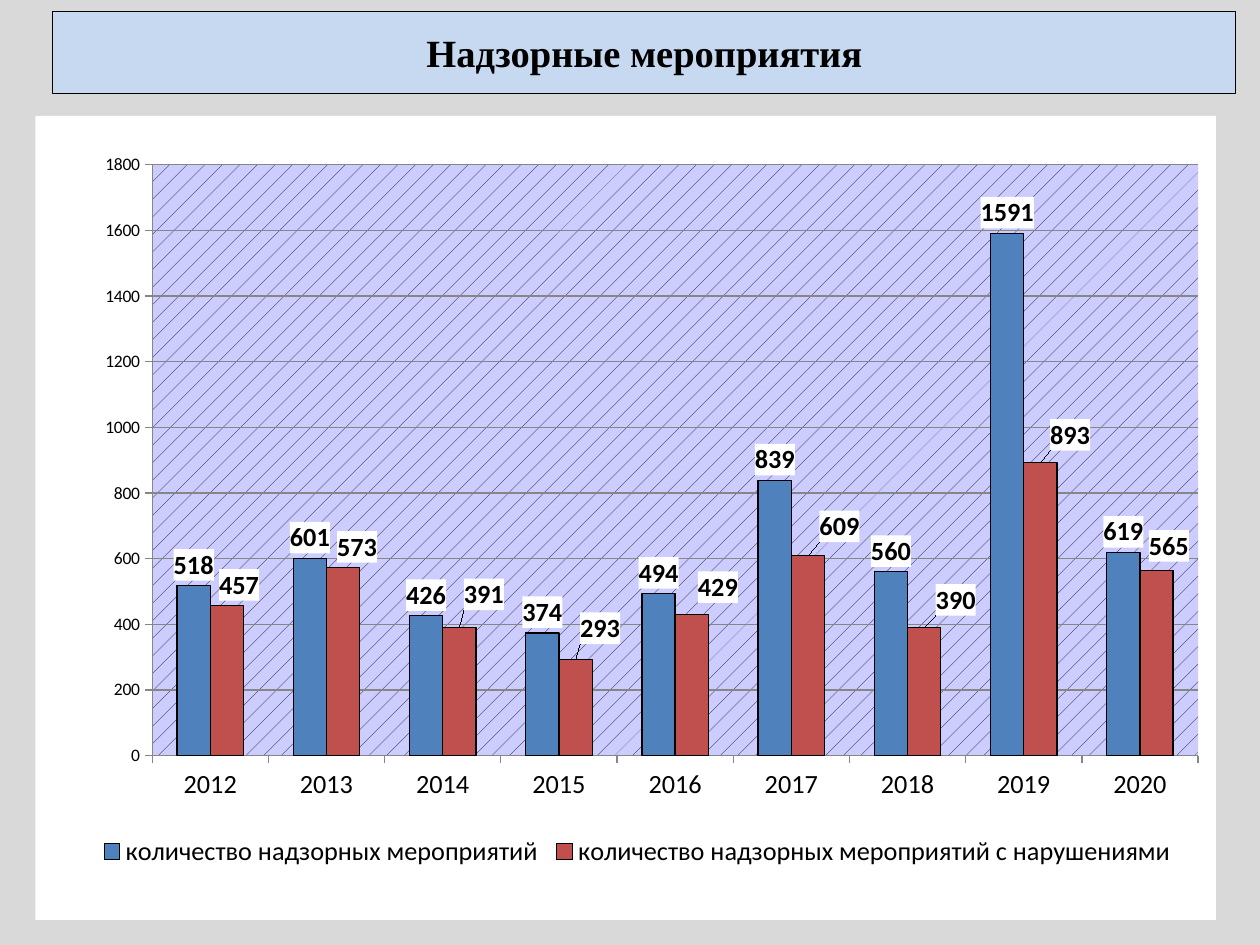
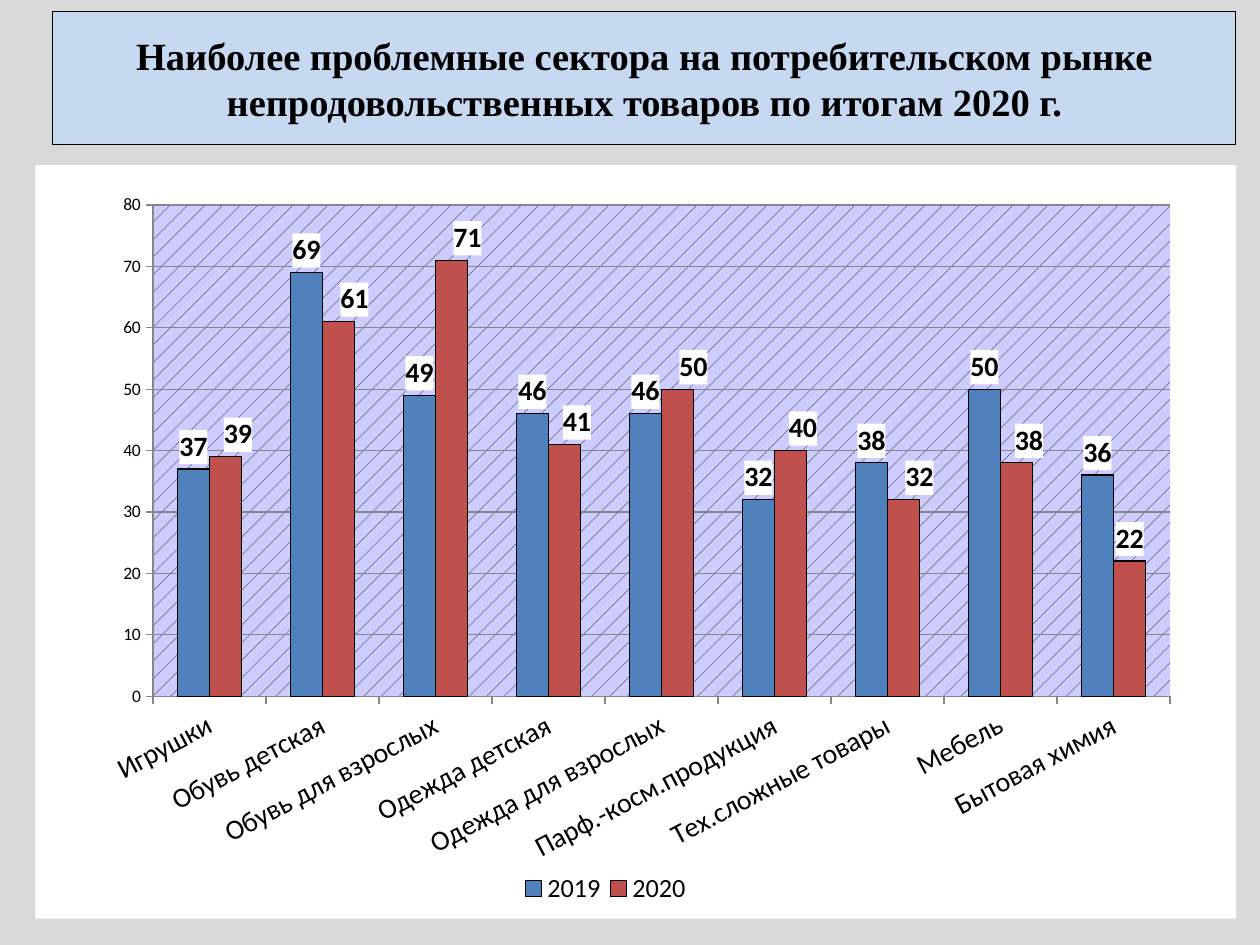
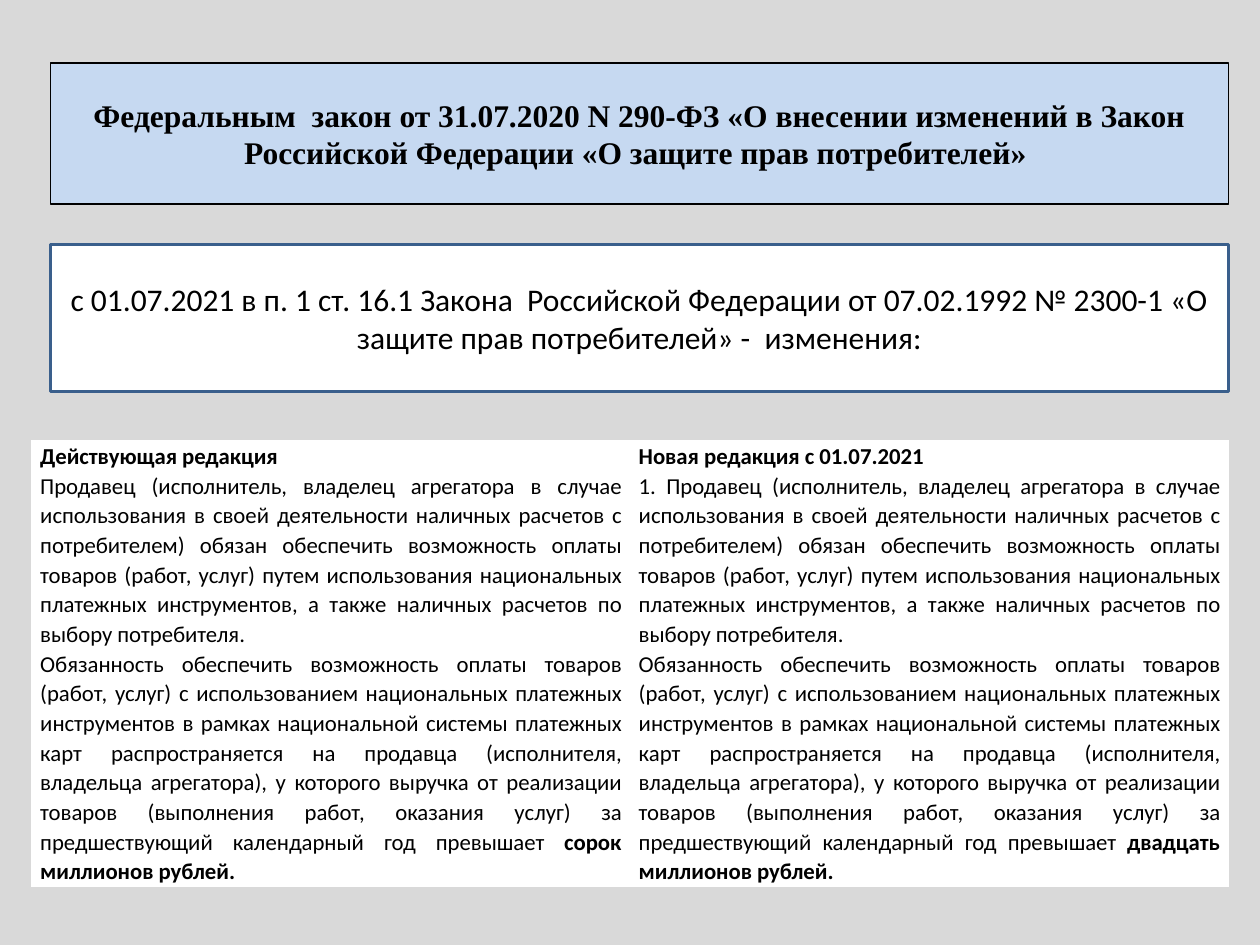
import copy
import dataclasses
import typing

import pptx
import pptx.chart.data
import pptx.dml.color
import pptx.enum.chart
import pptx.enum.shapes
import pptx.enum.text
import pptx.oxml
import pptx.oxml.ns
import pptx.util

Pt = pptx.util.Pt
RGBColor = pptx.dml.color.RGBColor

# Shared look
PAGE_GREY = RGBColor(0xD9, 0xD9, 0xD9)
BAND_BLUE = RGBColor(0xC6, 0xD9, 0xF1)
FRAME_BLUE = RGBColor(0x3A, 0x5F, 0x8C)
WHITE = RGBColor(0xFF, 0xFF, 0xFF)
BLACK = RGBColor(0x00, 0x00, 0x00)
GRID_GREY = RGBColor(0x86, 0x86, 0x86)
PLOT_LILAC = RGBColor(0xCC, 0xCC, 0xFF)
SERIES_COLORS = (RGBColor(0x4F, 0x81, 0xBD), RGBColor(0xC0, 0x50, 0x4D))
TITLE_FONT = "Times New Roman"
BODY_FONT = "Calibri"
TITLE_ONLY = 5


class Box(typing.NamedTuple):
    left: float
    top: float
    width: float
    height: float

    def lengths(self) -> list:
        return [Pt(value) for value in self]


class Span(typing.NamedTuple):
    text: str
    bold: bool = False


@dataclasses.dataclass
class Series:
    name: str
    values: tuple
    # Label shifts in points, by category
    shifts: tuple = ()


@dataclasses.dataclass
class ColumnChart:
    box: Box
    categories: tuple
    series: tuple
    maximum: int
    step: int
    category_size: int
    label_size: int
    plot: Box  # shares of the chart
    legend: Box  # shares of the chart
    legend_position: typing.Any
    rotation: int = 0


# Text helpers
def set_font(font, size: float, bold: bool = False, name: str = BODY_FONT) -> None:
    font.name = name
    font.size = Pt(size)
    font.bold = bold
    font.color.rgb = BLACK


def write_paragraph(para, spans: list, size: float, align, name: str = BODY_FONT) -> None:
    para.alignment = align
    for span in spans:
        run = para.add_run()
        run.text = span.text
        set_font(run.font, size, span.bold, name)


def fill_panel(panel, span: Span, size: float, fill: RGBColor, line: RGBColor,
               line_width: float, name: str) -> None:
    panel.fill.solid()
    panel.fill.fore_color.rgb = fill
    panel.line.color.rgb = line
    panel.line.width = Pt(line_width)
    frame = panel.text_frame
    frame.auto_size = pptx.enum.text.MSO_AUTO_SIZE.NONE
    frame.word_wrap = True
    frame.vertical_anchor = pptx.enum.text.MSO_ANCHOR.MIDDLE
    write_paragraph(frame.paragraphs[0], [span], size, pptx.enum.text.PP_ALIGN.CENTER, name)


def add_page(deck, title: str, box: Box, size: float = 22):
    page = deck.slides.add_slide(deck.slide_layouts[TITLE_ONLY])
    band = page.shapes.title
    band.left, band.top, band.width, band.height = box.lengths()
    fill_panel(band, Span(title, True), size, BAND_BLUE, BLACK, 0.75, TITLE_FONT)
    return page


# Chart helpers
def chart_xml(tag: str, content: str):
    names = pptx.oxml.ns.nsdecls("c", "a")
    return pptx.oxml.parse_xml(f"<c:{tag} {names}>{content}</c:{tag}>")


def solid_panel():
    return chart_xml("spPr", f'<a:solidFill><a:srgbClr val="{WHITE}"/></a:solidFill>'
                             '<a:ln><a:noFill/></a:ln>')


def edge_layout(area: Box, inner: bool = False):
    target = '<c:layoutTarget val="inner"/>' if inner else ""
    sizes = "".join(f'<c:{key} val="{value}"/>' for key, value in zip("xywh", area))
    return chart_xml("layout", f'<c:manualLayout>{target}<c:xMode val="edge"/>'
                               f'<c:yMode val="edge"/>{sizes}</c:manualLayout>')


def replace_layout(parent, layout, position: int) -> None:
    for old in parent.findall(pptx.oxml.ns.qn("c:layout")):
        parent.remove(old)
    parent.insert(position, layout)


def label_series(series, shifts: tuple, size: float, box: Box) -> None:
    labels = series.data_labels
    labels.show_value = True
    labels.position = pptx.enum.chart.XL_LABEL_POSITION.OUTSIDE_END
    set_font(labels.font, size, True)
    qn = pptx.oxml.ns.qn
    root = series._element.find(qn("c:dLbls"))
    root.find(qn("c:txPr")).addprevious(solid_panel())
    shared = [part for part in root if part.tag != qn("c:showLeaderLines")]
    for index, (right, down) in enumerate(shifts):
        label = chart_xml("dLbl", f'<c:idx val="{index}"/><c:layout><c:manualLayout>'
                                  f'<c:x val="{right / box.width:.4f}"/>'
                                  f'<c:y val="{down / box.height:.4f}"/>'
                                  '</c:manualLayout></c:layout>')
        for part in shared:
            label.append(copy.deepcopy(part))
        root.insert(index, label)


def style_axis(axis, size: float) -> None:
    axis.major_tick_mark = pptx.enum.chart.XL_TICK_MARK.OUTSIDE
    axis.format.line.color.rgb = GRID_GREY
    axis.format.line.width = Pt(0.75)
    set_font(axis.tick_labels.font, size)


def add_column_chart(page, design: ColumnChart) -> None:
    data = pptx.chart.data.CategoryChartData()
    data.categories = design.categories
    for item in design.series:
        data.add_series(item.name, item.values)
    chart = page.shapes.add_chart(pptx.enum.chart.XL_CHART_TYPE.COLUMN_CLUSTERED,
                                  *design.box.lengths(), data).chart
    chart.has_title = False
    set_font(chart.font, 10)

    # Columns and their labels
    plot = chart.plots[0]
    plot.gap_width = 150
    plot.overlap = 0
    plot.vary_by_categories = False
    for series, item, color in zip(plot.series, design.series, SERIES_COLORS):
        series.format.fill.solid()
        series.format.fill.fore_color.rgb = color
        series.format.line.color.rgb = BLACK
        series.format.line.width = Pt(0.75)
        label_series(series, item.shifts, design.label_size, design.box)

    # Axes
    style_axis(chart.category_axis, design.category_size)
    style_axis(chart.value_axis, 10)
    chart.value_axis.minimum_scale = 0
    chart.value_axis.maximum_scale = design.maximum
    chart.value_axis.major_unit = design.step
    grid = chart.value_axis.major_gridlines.format.line
    grid.color.rgb = GRID_GREY
    grid.width = Pt(0.75)
    body = chart.category_axis._element.find(".//" + pptx.oxml.ns.qn("a:bodyPr"))
    body.set("rot", str(design.rotation * 60000))
    body.set("vert", "horz")

    # Legend
    chart.has_legend = True
    chart.legend.position = design.legend_position
    chart.legend.include_in_layout = False
    set_font(chart.legend.font, 15)
    replace_layout(chart.legend._element, edge_layout(design.legend), 1)

    # Chart and plot backgrounds
    root = chart._chartSpace
    root.find(pptx.oxml.ns.qn("c:chart")).addnext(solid_panel())
    area = root.find(".//" + pptx.oxml.ns.qn("c:plotArea"))
    replace_layout(area, edge_layout(design.plot, True), 0)
    area.append(chart_xml("spPr", '<a:pattFill prst="pct5">'
                                  f'<a:fgClr><a:srgbClr val="{BLACK}"/></a:fgClr>'
                                  f'<a:bgClr><a:srgbClr val="{PLOT_LILAC}"/></a:bgClr>'
                                  '</a:pattFill><a:ln><a:noFill/></a:ln>'))


# Table helper
def add_text_table(page, box: Box, row_heights: tuple, rows: list) -> None:
    table = page.shapes.add_table(len(rows), len(rows[0]), *box.lengths()).table
    table.horz_banding = False
    for row, height, texts in zip(table.rows, row_heights, rows):
        row.height = Pt(height)
        for cell, paragraphs in zip(row.cells, texts):
            cell.fill.solid()
            cell.fill.fore_color.rgb = WHITE
            cell.margin_left = cell.margin_right = Pt(5)
            cell.margin_top = cell.margin_bottom = Pt(0)
            frame = cell.text_frame
            for index, spans in enumerate(paragraphs):
                para = frame.add_paragraph() if index else frame.paragraphs[0]
                para.line_spacing = 1.07
                write_paragraph(para, spans, 13, pptx.enum.text.PP_ALIGN.JUSTIFY)


# Slide content
INSPECTIONS = ColumnChart(
    box=Box(20.2, 66.2, 674.6, 459.4),
    categories=tuple(str(year) for year in range(2012, 2021)),
    series=(
        Series("количество надзорных мероприятий",
               (518, 601, 426, 374, 494, 839, 560, 1591, 619)),
        Series("количество надзорных мероприятий с нарушениями",
               (457, 573, 391, 293, 429, 609, 390, 893, 565),
               ((7, 0), (8, 0), (14, -7), (14, -6), (15, -4),
                (18, -5), (18, -4), (17, -4), (7, -2))),
    ),
    maximum=1800, step=200, category_size=15, label_size=15,
    plot=Box(0.099, 0.061, 0.886, 0.735),
    legend=Box(0.05, 0.88, 0.92, 0.07),
    legend_position=pptx.enum.chart.XL_LEGEND_POSITION.BOTTOM,
)

SECTORS = ColumnChart(
    box=Box(20.2, 94.3, 686.2, 430.6),
    categories=("Игрушки", "Обувь детская", "Обувь для взрослых", "Одежда детская",
                "Одежда для взрослых", "Парф.-косм.продукция", "Тех.сложные товары",
                "Мебель", "Бытовая химия"),
    series=(
        Series("2019", (37, 69, 49, 46, 46, 32, 38, 50, 36)),
        Series("2020", (39, 61, 71, 41, 50, 40, 32, 38, 22),
               tuple((right, 0) for right in (7, 9, 9, 7, 9, 7, 9, 7))),
    ),
    maximum=80, step=10, category_size=16, label_size=16,
    plot=Box(0.098, 0.053, 0.847, 0.652),
    legend=Box(0.4, 0.93, 0.15, 0.06),
    legend_position=pptx.enum.chart.XL_LEGEND_POSITION.RIGHT,
    rotation=-28,
)

SELLER_DUTY = (
    "Продавец (исполнитель, владелец агрегатора в случае использования в своей "
    "деятельности наличных расчетов с потребителем) обязан обеспечить возможность "
    "оплаты товаров (работ, услуг) путем использования национальных платежных "
    "инструментов, а также наличных расчетов по выбору потребителя."
)
CARD_DUTY = (
    "Обязанность обеспечить возможность оплаты товаров (работ, услуг) с использованием "
    "национальных платежных инструментов в рамках национальной системы платежных карт "
    "распространяется на продавца (исполнителя, владельца агрегатора), у которого "
    "выручка от реализации товаров (выполнения работ, оказания услуг) за "
    "предшествующий календарный год превышает "
)


def wording(number: str, limit: str) -> list:
    return [[Span(number + SELLER_DUTY)],
            [Span(CARD_DUTY), Span(f"{limit} миллионов рублей.", True)]]


def main() -> None:
    deck = pptx.Presentation()
    deck.slide_width, deck.slide_height = Pt(720), Pt(540)
    background = deck.slide_master.background.fill
    background.solid()
    background.fore_color.rgb = PAGE_GREY

    # Inspections by year
    page = add_page(deck, "Надзорные мероприятия", Box(30.2, 6.5, 676, 46.8))
    add_column_chart(page, INSPECTIONS)

    # Problem sectors
    page = add_page(deck, "Наиболее проблемные сектора на потребительском рынке "
                          "непродовольственных товаров по итогам 2020 г.",
                    Box(30.2, 6.5, 676, 76.3))
    add_column_chart(page, SECTORS)

    # Change in the law
    page = add_page(deck, "Федеральным  закон от 31.07.2020 N 290-ФЗ «О внесении изменений "
                          "в Закон Российской Федерации «О защите прав потребителей» ",
                    Box(28.8, 36, 673.2, 80.6), 18)
    notice = page.shapes.add_shape(pptx.enum.shapes.MSO_SHAPE.RECTANGLE,
                                   *Box(28.8, 139.7, 673.2, 84.2).lengths())
    notice.shadow.inherit = False
    fill_panel(notice, Span("с 01.07.2021 в п. 1 ст. 16.1 Закона  Российской Федерации от "
                            "07.02.1992 № 2300-1 «О защите прав потребителей» -  изменения:"),
               18, WHITE, FRAME_BLUE, 2, BODY_FONT)
    add_text_table(page, Box(18, 252, 684, 250.6), (16.6, 234), [
        [[[Span("Действующая редакция", True)]], [[Span("Новая редакция с 01.07.2021", True)]]],
        [wording("", "сорок"), wording("1. ", "двадцать")],
    ])

    deck.save("out.pptx")


if __name__ == "__main__":
    main()
